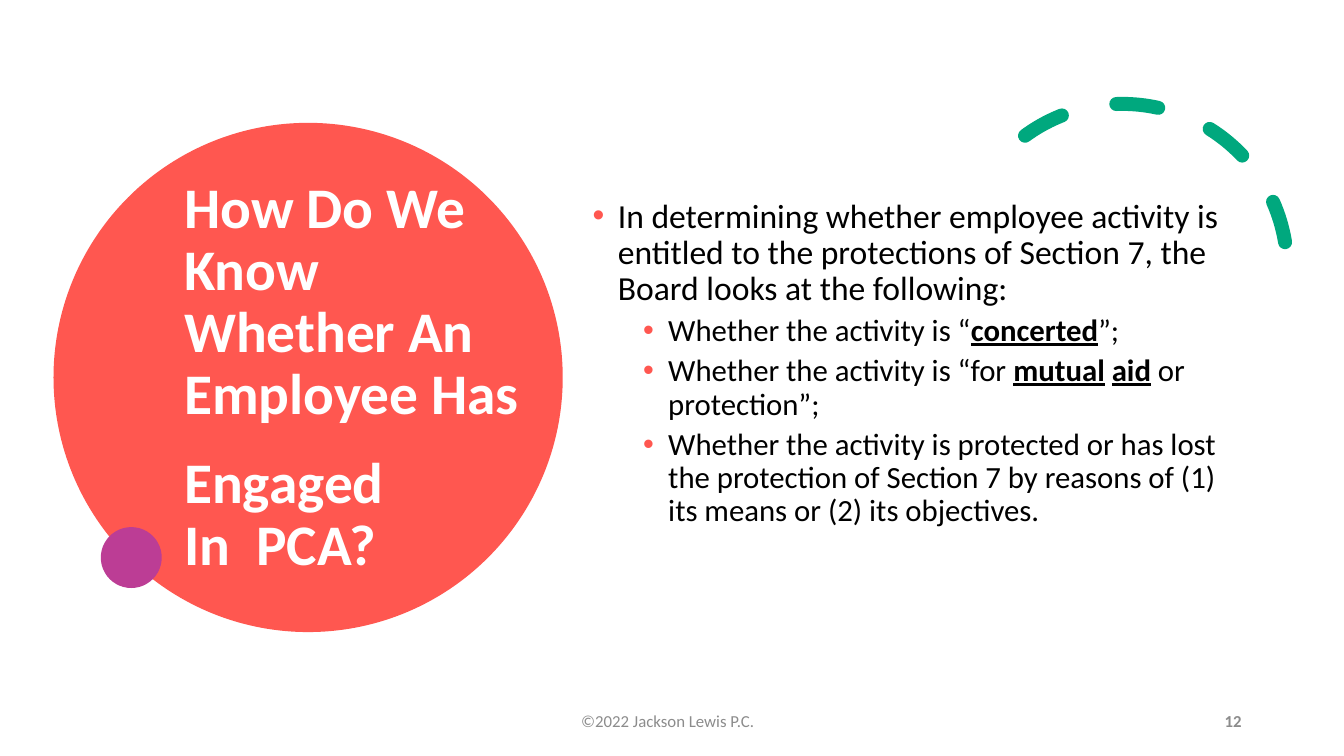
import pptx
import pptx.util
import pptx.dml.color
import pptx.enum.dml
import pptx.enum.shapes
import pptx.enum.text
import pptx.oxml

EMU_PER_PX = 9525
FONT = "Calibri"
COLORS = {
    "white": "FFFFFF",
    "black": "000000",
    "coral": "FF5750",
    "green": "00A87E",
    "magenta": "BC3D95",
    "gray": "8C8C8C",
}
SHAPES = pptx.enum.shapes.MSO_SHAPE
ALIGN = pptx.enum.text.PP_ALIGN
ANCHOR = pptx.enum.text.MSO_ANCHOR

TITLE = "How Do We Know Whether An Employee Has\v\vEngaged\vIn  PCA?"
INTRO = ("In determining whether employee activity is entitled to the "
         "protections of Section 7, the Board looks at the following:")
# Every second piece of a test is emphasized.
TESTS = [
    ["Whether the activity is “", "concerted", "”;"],
    ["Whether the activity is “for ", "mutual", " ", "aid", " or protection”;"],
    ["Whether the activity is protected or has lost the protection of "
     "Section 7 by reasons of (1) its means or (2) its objectives."],
]


def px(length):
    return pptx.util.Emu(length * EMU_PER_PX)


def rgb(name):
    return pptx.dml.color.RGBColor.from_string(COLORS[name])


def add_element(parent, xml):
    namespace = pptx.oxml.ns.nsdecls("a")
    parent.append(pptx.oxml.parse_xml(xml.replace("/>", f" {namespace}/>", 1)
                                      if xml.count("<") == 1
                                      else xml.replace(">", f" {namespace}>", 1)))


def add_frame(slide, left, top, width, height, anchor=ANCHOR.TOP):
    frame = slide.shapes.add_textbox(px(left), px(top), px(width), px(height)).text_frame
    frame.word_wrap = True
    frame.vertical_anchor = anchor
    return frame


def write(paragraph, text, size, color="black", bold=False, underline=False):
    """Append text, with a line break at each vertical tab."""
    for index, line in enumerate(text.split("\v")):
        if index:
            paragraph.add_line_break()
        if line:
            run = paragraph.add_run()
            run.text = line
            run.font.name = FONT
            run.font.size = pptx.util.Pt(size)
            run.font.bold = bold
            run.font.underline = underline
            run.font.color.rgb = rgb(color)


def add_bullet(paragraph, indent):
    properties = paragraph._p.get_or_add_pPr()
    properties.set("marL", str(px(indent)))
    properties.set("indent", str(px(-24)))
    add_element(properties, f'<a:buClr><a:srgbClr val="{COLORS["coral"]}"/></a:buClr>')
    add_element(properties, '<a:buFont typeface="Arial"/>')
    add_element(properties, '<a:buChar char="•"/>')
    paragraph.line_spacing = 0.9


def add_circle(slide, left, top, diameter, color):
    circle = slide.shapes.add_shape(SHAPES.OVAL, px(left), px(top), px(diameter), px(diameter))
    circle.shadow.inherit = False
    circle.fill.solid()
    circle.fill.fore_color.rgb = rgb(color)
    circle.line.fill.background()


def add_dashed_arc(slide, left, top, diameter):
    arc = slide.shapes.add_shape(SHAPES.ARC, px(left), px(top), px(diameter), px(diameter))
    arc.shadow.inherit = False
    arc.adjustments[0] = 158.17
    arc.adjustments[1] = 17.81
    arc.rotation = 330.2
    arc.fill.background()
    arc.line.color.rgb = rgb("green")
    arc.line.width = pptx.util.Pt(10)
    arc.line.dash_style = pptx.enum.dml.MSO_LINE.DASH
    arc.line._get_or_add_ln().set("cap", "rnd")


def add_title_circle(slide, left, top, diameter):
    add_circle(slide, left, top, diameter, "coral")
    frame = add_frame(slide, left + 115, top + 30, 340, 427, ANCHOR.MIDDLE)
    frame.margin_right = 0
    paragraph = frame.paragraphs[0]
    paragraph.line_spacing = 0.9
    write(paragraph, TITLE, size=41, color="white", bold=True)


def add_tests(slide, left, top, width, height):
    frame = add_frame(slide, left, top, width, height)
    intro = frame.paragraphs[0]
    add_bullet(intro, indent=24)
    write(intro, INTRO, size=24)
    for pieces in TESTS:
        paragraph = frame.add_paragraph()
        paragraph.level = 1
        add_bullet(paragraph, indent=72)
        paragraph.space_before = pptx.util.Pt(5)
        for index, piece in enumerate(pieces):
            emphasized = index % 2 == 1
            write(paragraph, piece, size=22, bold=emphasized, underline=emphasized)


def add_footer(slide, left, top, width, height):
    number_width = 288
    copyright_line = add_frame(slide, left, top, 424, height, ANCHOR.MIDDLE).paragraphs[0]
    copyright_line.alignment = ALIGN.CENTER
    write(copyright_line, "©2022 Jackson Lewis P.C.", size=12, color="gray")
    number = add_frame(slide, left + width - number_width, top, number_width, height,
                       ANCHOR.MIDDLE).paragraphs[0]
    number.alignment = ALIGN.RIGHT
    write(number, "12", size=12, color="gray", bold=True)


def main():
    presentation = pptx.Presentation()
    presentation.slide_width = px(1280)
    presentation.slide_height = px(720)
    slide = presentation.slides.add_slide(presentation.slide_layouts[6])
    add_title_circle(slide, 51, 117, 485)
    add_dashed_arc(slide, 912, 99, 314)
    add_circle(slide, 96, 502, 58, "magenta")
    add_tests(slide, 555, 185, 621, 492)
    add_footer(slide, 424, 667, 768, 38)
    presentation.save("out.pptx")


if __name__ == "__main__":
    main()
